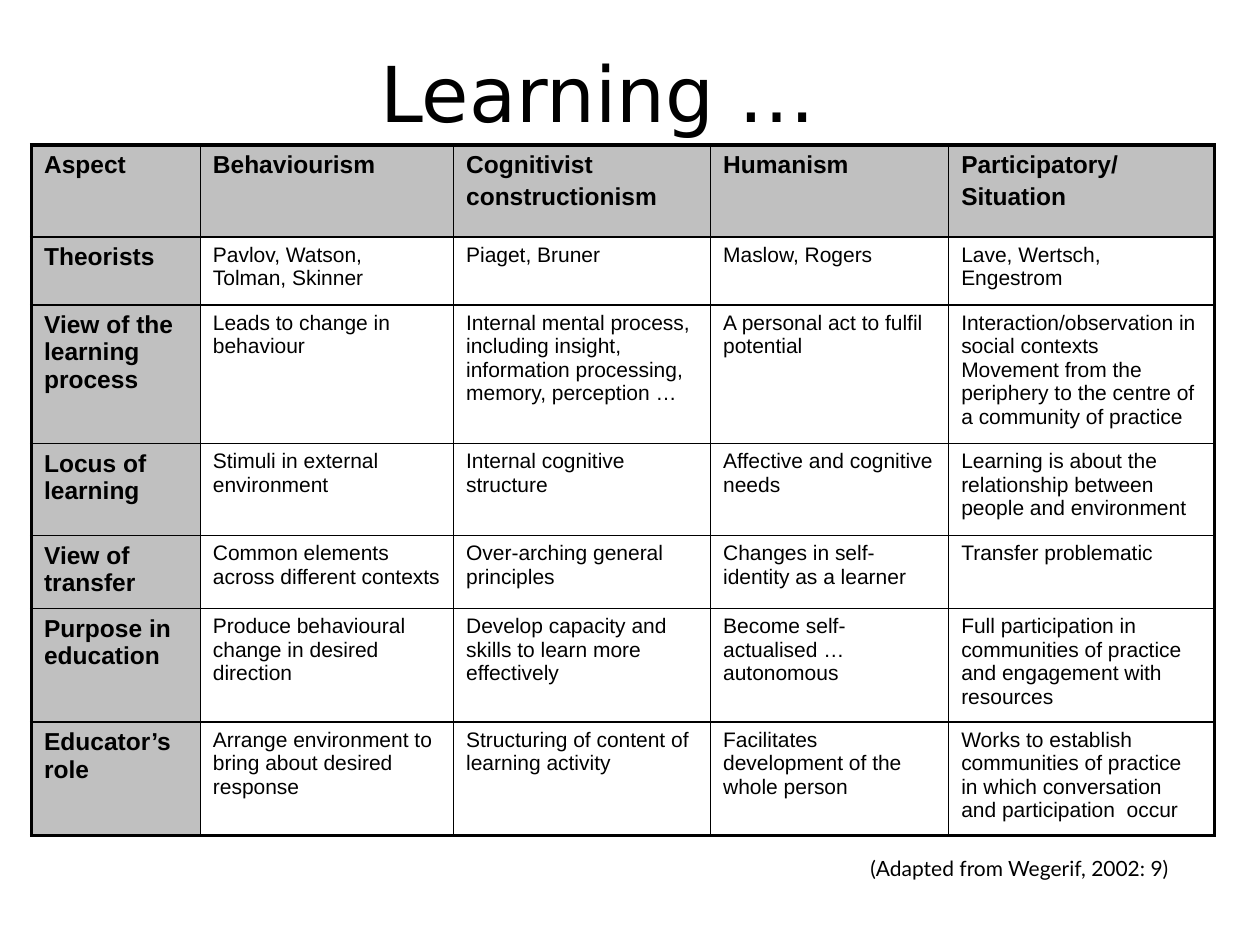
"""Build a slide with a table comparing theories of learning."""
from dataclasses import dataclass

from lxml.etree import SubElement
from pptx import Presentation
from pptx.dml.color import RGBColor
from pptx.enum.text import MSO_ANCHOR, PP_ALIGN
from pptx.oxml.ns import qn
from pptx.util import Inches, Pt


@dataclass(frozen=True)
class Theme:
    ink: RGBColor = RGBColor(0, 0, 0)
    heading_fill: RGBColor = RGBColor(0xC0, 0xC0, 0xC0)
    title_font: str = "DejaVu Sans"
    table_font: str = "Arial"
    source_font: str = "Lato"
    title_size: int = 44
    heading_size: int = 14
    body_size: int = 12
    outer_line: float = 2.25
    inner_line: float = 1


theme = Theme()


def add_span(para, text, font, size, bold=False):
    span = para.add_run()
    span.text = text
    span.font.name = font
    span.font.size = Pt(size)
    span.font.bold = bold
    span.font.color.rgb = theme.ink


def add_border(cell, side, points):
    properties = cell._tc.get_or_add_tcPr()
    line = SubElement(properties, qn(f"a:{side}"), w=str(Pt(points)))
    fill = SubElement(line, qn("a:solidFill"))
    SubElement(fill, qn("a:srgbClr"), val=str(theme.ink))


column_widths = [1.34, 2.01, 2.04, 1.89, 2.11]
row_heights = [0.73, 0.54, 1.1, 0.73, 0.58, 0.9, 0.9]
table_rows = [
    ["Aspect", "Behaviourism", "Cognitivist\nconstructionism", "Humanism",
     "Participatory/\nSituation"],
    ["Theorists", "Pavlov, Watson, Tolman, Skinner", "Piaget, Bruner",
     "Maslow, Rogers", "Lave, Wertsch, Engestrom"],
    ["View of the learning process", "Leads to change in behaviour",
     "Internal mental process, including insight, information processing, "
     "memory, perception …",
     "A personal act to fulfil potential",
     "Interaction/observation in social contexts Movement from the periphery "
     "to the centre of a community of practice"],
    ["Locus of learning", "Stimuli in external environment",
     "Internal cognitive structure", "Affective and cognitive needs",
     "Learning is about the relationship between people and environment"],
    ["View of transfer", "Common elements across different contexts",
     "Over-arching general principles", "Changes in self-identity as a learner",
     "Transfer problematic"],
    ["Purpose in education", "Produce behavioural change in desired direction",
     "Develop capacity and skills to learn more effectively",
     "Become self-actualised … autonomous",
     "Full participation in communities of practice and engagement with resources"],
    ["Educator’s role", "Arrange environment to bring about desired response",
     "Structuring of content of learning activity",
     "Facilitates development of the whole person",
     "Works to establish communities of practice in which conversation and "
     "participation  occur"],
]

deck = Presentation()
deck.slide_width = Inches(10)
deck.slide_height = Inches(7.5)
page = deck.slides.add_slide(deck.slide_layouts[6])

title_box = page.shapes.add_textbox(Inches(0.5), Inches(0.3), Inches(8.5), Inches(0.85))
title_box.text_frame.word_wrap = True
title_box.text_frame.vertical_anchor = MSO_ANCHOR.MIDDLE
title_para = title_box.text_frame.paragraphs[0]
title_para.alignment = PP_ALIGN.CENTER
add_span(title_para, "Learning …", theme.title_font, theme.title_size)

table = page.shapes.add_table(
    len(row_heights), len(column_widths), Inches(0.25), Inches(1.15),
    Inches(sum(column_widths)), Inches(sum(row_heights))).table
table.first_row = False
table.horz_banding = False
for column, width in zip(table.columns, column_widths):
    column.width = Inches(width)
for row, height in zip(table.rows, row_heights):
    row.height = Inches(height)

last_row = len(row_heights) - 1
last_column = len(column_widths) - 1
for row_index, texts in enumerate(table_rows):
    for column_index, text in enumerate(texts):
        cell = table.cell(row_index, column_index)
        heading = row_index == 0 or column_index == 0
        size = theme.heading_size if heading else theme.body_size
        cell.margin_left = cell.margin_right = Inches(0.1)
        cell.margin_top = cell.margin_bottom = Inches(0.05)
        for line_index, line_text in enumerate(text.split("\n")):
            frame = cell.text_frame
            para = frame.add_paragraph() if line_index else frame.paragraphs[0]
            para.space_before = Pt(size * 0.2)
            add_span(para, line_text, theme.table_font, size, heading)
        outer_sides = {
            "lnL": column_index == 0,
            "lnR": column_index == last_column,
            "lnT": row_index == 0,
            "lnB": row_index == last_row,
        }
        for side, outer in outer_sides.items():
            add_border(cell, side, theme.outer_line if outer else theme.inner_line)
        if heading:
            cell.fill.solid()
            cell.fill.fore_color.rgb = theme.heading_fill
        else:
            cell.fill.background()

source_box = page.shapes.add_textbox(Inches(6.81), Inches(6.74), Inches(2.83), Inches(0.3))
source_box.text_frame.word_wrap = True
add_span(source_box.text_frame.paragraphs[0], "(Adapted from Wegerif, 2002: 9)",
         theme.source_font, theme.body_size)

deck.save("out.pptx")
